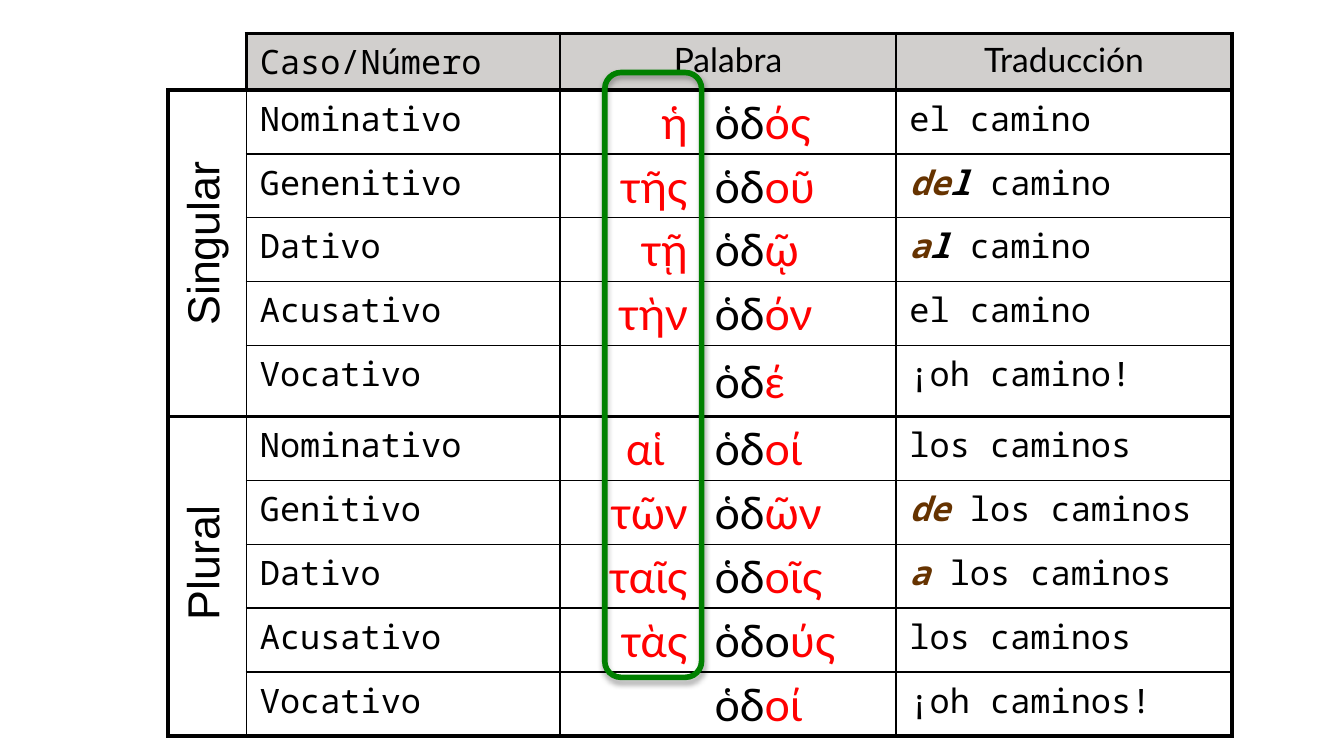
import dataclasses

import pptx
import pptx.dml.color
import pptx.enum.shapes
import pptx.enum.text
import pptx.oxml
import pptx.oxml.ns
import pptx.util

ALIGN = pptx.enum.text.PP_ALIGN
ANCHOR = pptx.enum.text.MSO_ANCHOR
GRID_COLUMNS, GRID_ROWS = 80, 45
UNIT = pptx.util.Inches(10) // GRID_COLUMNS


@dataclasses.dataclass(frozen=True)
class Theme:
    ink: str = "000000"
    ending: str = "FF0000"
    particle: str = "663300"
    header: str = "D1CFCD"
    highlight: str = "008000"
    mono: str = "Noto Sans Mono"
    greek: str = "Lato"
    label: str = "Arial"
    body_size: int = 18
    large_size: int = 24
    thin: float = 1
    heavy: float = 2.25
    frame: float = 3


THEME = Theme()
MONO = {"name": THEME.mono, "size": pptx.util.Pt(THEME.body_size)}
EMPHASIS = {**MONO, "bold": True, "italic": True}
HEADING = {"name": THEME.greek, "size": pptx.util.Pt(THEME.body_size)}
GREEK = {"name": THEME.greek, "size": pptx.util.Pt(THEME.large_size)}
LABEL = {"name": THEME.label, "size": pptx.util.Pt(THEME.large_size)}

COLUMN_UNITS = [4.67, 18.67, 8, 12, 20]
ROW_UNITS = [3.36] + [3.8] * 4 + [4.25] + [3.8] * 5
BLOCK_LINES = {0, 1, 6, 11}
HEADERS = {1: ("Caso/Número", MONO, ALIGN.LEFT),
           2: ("Palabra", HEADING, ALIGN.CENTER),
           4: ("Traducción", HEADING, ALIGN.CENTER)}
DECLENSION = [
    ("Nominativo", "ἡ", "ὁδ", "ός", "", "", "el camino"),
    ("Genenitivo", "τῆς", "ὁδ", "οῦ", "de", "l", " camino"),
    ("Dativo", "τῇ", "ὁδ", "ῷ", "a", "l ", "camino"),
    ("Acusativo", "τὴν", "ὁδ", "όν", "", "", "el camino"),
    ("Vocativo", "", "ὁδ", "έ", "", "", "¡oh camino!"),
    ("Nominativo", "αἱ", "ὁδ", "oί", "", "", "los caminos"),
    ("Genitivo", "τῶν", "ὁδ", "ῶν", "de ", "", "los caminos"),
    ("Dativo", "ταῖς", "ὁδ", "oῖς", "a ", "", "los caminos"),
    ("Acusativo", "τὰς", "ὁδο", "ύς", "", "", "los caminos"),
    ("Vocativo", "", "ὁδ", "oί", "", "", "¡oh caminos!"),
]
PLURAL_ARTICLE_ROW = 6


def grid(*units):
    return [pptx.util.Emu(round(unit * UNIT)) for unit in units]


def apply(target, values):
    for attribute, value in values.items():
        setattr(target, attribute, value)


def rgb(color):
    return pptx.dml.color.RGBColor.from_string(color)


def write(paragraph, runs):
    for text, font, color in runs:
        if text:
            run = paragraph.add_run()
            run.text = text
            apply(run.font, font)
            run.font.color.rgb = rgb(color)


def border(cell, side, weight):
    line = pptx.oxml.parse_xml(
        f'<a:ln{side} {pptx.oxml.ns.nsdecls("a")} w="{pptx.util.Pt(weight)}">'
        + (f'<a:solidFill><a:srgbClr val="{THEME.ink}"/></a:solidFill>' if weight else "<a:noFill/>")
        + f"</a:ln{side}>")
    cell._tc.get_or_add_tcPr().append(line)


def horizontal_weight(line, column):
    if line == 0 and column == 0:
        return 0
    return THEME.heavy if line in BLOCK_LINES or column == 0 else THEME.thin


def vertical_weight(line, row):
    if line == 0:
        return THEME.heavy if row else 0
    if line == 1:
        return THEME.thin if row else THEME.heavy
    if line == 3:
        return 0 if row else THEME.thin
    return THEME.heavy if line == len(COLUMN_UNITS) else THEME.thin


def format_cell(cell, row, column):
    border(cell, "L", vertical_weight(column, row))
    border(cell, "R", vertical_weight(column + 1, row))
    border(cell, "T", horizontal_weight(row, column))
    border(cell, "B", horizontal_weight(row + 1, column))
    if row == 0 and column:
        cell.fill.solid()
        cell.fill.fore_color.rgb = rgb(THEME.header)
    else:
        cell.fill.background()


def fill_mono(cell, runs, alignment=ALIGN.LEFT):
    apply(cell, dict(zip(("margin_left", "margin_top", "margin_right", "margin_bottom"),
                         grid(0.8, 0.32, 0.8, 0.32))))
    paragraph = cell.text_frame.paragraphs[0]
    apply(paragraph, {"alignment": alignment, "space_before": pptx.util.Pt(3.6)})
    write(paragraph, runs)


def fill_greek(cell, runs, alignment, right=0.4):
    left_gap, right_gap, indent = grid(0.4, right, 0.8)
    apply(cell, {"margin_left": left_gap, "margin_right": right_gap, "margin_top": 0,
                 "margin_bottom": 0, "vertical_anchor": ANCHOR.MIDDLE})
    paragraph = cell.text_frame.paragraphs[0]
    paragraph.alignment = alignment
    paragraph._p.get_or_add_pPr().set("indent", str(indent))
    write(paragraph, runs)


def add_declension(slide):
    table = slide.shapes.add_table(
        len(ROW_UNITS), len(COLUMN_UNITS),
        *grid(10, 2, sum(COLUMN_UNITS), sum(ROW_UNITS))).table
    apply(table, {"first_row": False, "horz_banding": False})
    for column, width in zip(table.columns, grid(*COLUMN_UNITS)):
        column.width = width
    for row, height in zip(table.rows, grid(*ROW_UNITS)):
        row.height = height
    for row in range(len(ROW_UNITS)):
        for column in range(len(COLUMN_UNITS)):
            format_cell(table.cell(row, column), row, column)
    for first, last in [((0, 2), (0, 3)), ((1, 0), (5, 0)), ((6, 0), (10, 0))]:
        table.cell(*first).merge(table.cell(*last))
    for column, (text, font, alignment) in HEADERS.items():
        fill_mono(table.cell(0, column), [(text, font, THEME.ink)], alignment)
    for row, (case, article, stem, ending, particle, joint, meaning) in enumerate(DECLENSION, 1):
        fill_mono(table.cell(row, 1), [(case, MONO, THEME.ink)])
        fill_greek(table.cell(row, 2), [(article, GREEK, THEME.ending)], ALIGN.RIGHT,
                   1.8 if row == PLURAL_ARTICLE_ROW else 0.4)
        fill_greek(table.cell(row, 3),
                   [(stem, GREEK, THEME.ink), (ending, GREEK, THEME.ending)], ALIGN.LEFT)
        fill_mono(table.cell(row, 4), [(particle, EMPHASIS, THEME.particle),
                                       (joint, EMPHASIS, THEME.ink),
                                       (meaning, MONO, THEME.ink)])


def add_number_label(slide, text, top):
    label = slide.shapes.add_textbox(*grid(3, top, 18, 4))
    label.rotation = 270
    apply(label.text_frame, {"word_wrap": True,
                             "auto_size": pptx.enum.text.MSO_AUTO_SIZE.SHAPE_TO_FIT_TEXT})
    paragraph = label.text_frame.paragraphs[0]
    apply(paragraph, {"alignment": ALIGN.CENTER, "space_before": pptx.util.Pt(12)})
    write(paragraph, [(text, LABEL, THEME.ink)])


def add_article_frame(slide):
    frame = slide.shapes.add_shape(
        pptx.enum.shapes.MSO_SHAPE.ROUNDED_RECTANGLE, *grid(36, 4.32, 5.76, 36))
    frame.fill.background()
    frame.line.color.rgb = rgb(THEME.highlight)
    frame.line.width = pptx.util.Pt(THEME.frame)
    frame.shadow.inherit = False
    effects = frame._element.spPr.find(pptx.oxml.ns.qn("a:effectLst"))
    effects.append(pptx.oxml.parse_xml(
        f'<a:outerShdw {pptx.oxml.ns.nsdecls("a")} blurRad="{pptx.util.Pt(3.1)}" '
        f'dist="{pptx.util.Pt(1.8)}" dir="5400000" rotWithShape="0">'
        f'<a:srgbClr val="{THEME.ink}"><a:alpha val="35000"/></a:srgbClr></a:outerShdw>'))


def main():
    deck = pptx.Presentation()
    apply(deck, {"slide_width": GRID_COLUMNS * UNIT, "slide_height": GRID_ROWS * UNIT})
    slide = deck.slides.add_slide(deck.slide_layouts[6])
    add_declension(slide)
    for text, top in (("Singular", 12.5), ("Plural", 31.5)):
        add_number_label(slide, text, top)
    add_article_frame(slide)
    deck.save("out.pptx")


if __name__ == "__main__":
    main()
